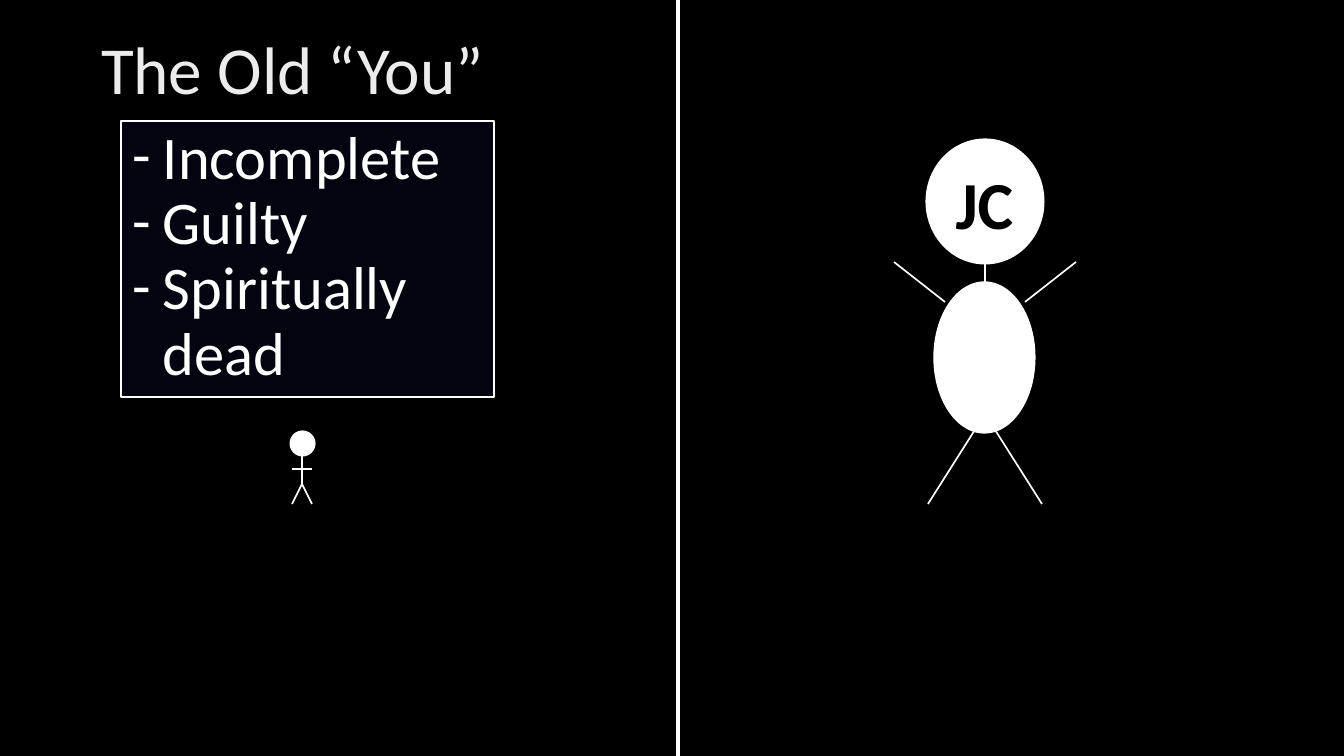
from lxml import etree
from pptx import Presentation
from pptx.dml.color import RGBColor
from pptx.enum.shapes import MSO_CONNECTOR, MSO_SHAPE
from pptx.enum.text import MSO_ANCHOR, PP_ALIGN
from pptx.oxml.ns import qn
from pptx.util import Pt

EMU_PER_PX = 7557
BLACK = RGBColor(0x00, 0x00, 0x00)
WHITE = RGBColor(0xFF, 0xFF, 0xFF)
OFF_WHITE = RGBColor(0xEC, 0xEC, 0xEC)
NAVY = RGBColor(0x04, 0x04, 0x10)
OVAL, RECT = MSO_SHAPE.OVAL, MSO_SHAPE.RECTANGLE
STRAIGHT = MSO_CONNECTOR.STRAIGHT
CENTER, LEFT = PP_ALIGN.CENTER, PP_ALIGN.LEFT
TOP = MSO_ANCHOR.TOP


def px(*values):
    return [v * EMU_PER_PX for v in values]


class SlideBuilder:
    """Draw styled elements on the current slide or group."""

    font = "Calibri"

    def __init__(self, prs):
        self.slide = prs.slides.add_slide(prs.slide_layouts[6])
        self.shapes = self.slide.shapes
        fill = self.slide.background.fill
        fill.solid()
        fill.fore_color.rgb = BLACK

    def start_group(self):
        self.shapes = self.slide.shapes.add_group_shape().shapes

    def end_group(self):
        self.shapes = self.slide.shapes

    def shape(self, kind, box, fill=WHITE, width=0.75):
        sp = self.shapes.add_shape(kind, *px(*box))
        sp.shadow.inherit = False
        sp.fill.solid()
        sp.fill.fore_color.rgb = fill
        sp.line.color.rgb = WHITE
        sp.line.width = Pt(width)
        return sp

    def line(self, ends, width=1):
        cxn = self.shapes.add_connector(STRAIGHT, *px(*ends))
        cxn.line.color.rgb = WHITE
        cxn.line.width = Pt(width)
        etree.SubElement(cxn._element.spPr, qn("a:effectLst"))

    def set_text(self, sp, lines, color, size, bold=False, align=CENTER, bullet=None):
        tf = sp.text_frame
        for name, value in {"word_wrap": True, "vertical_anchor": TOP}.items():
            setattr(tf, name, value)
        style = {"name": self.font, "size": Pt(size), "bold": bold}
        for i, text in enumerate(lines):
            p = tf.paragraphs[0] if i == 0 else tf.add_paragraph()
            p.alignment = align
            r = p.add_run()
            r.text = text
            for name, value in style.items():
                setattr(r.font, name, value)
            r.font.color.rgb = color
            if bullet:
                self.bullet(p, bullet)

    def bullet(self, p, char):
        p.line_spacing = 0.9
        pPr = p._p.get_or_add_pPr()
        indent = 30 * EMU_PER_PX
        pPr.set("marL", str(indent))
        pPr.set("indent", str(-indent))
        etree.SubElement(pPr, qn("a:buFont")).set("typeface", self.font)
        etree.SubElement(pPr, qn("a:buChar")).set("char", char)

    def text(self, box, text, color, size, bold=False):
        self.set_text(self.shapes.add_textbox(*px(*box)), [text], color, size, bold)

    def figure(self, head, cx, neck, hip, foot, stride, arms):
        self.shape(OVAL, head, width=3)
        self.line((cx, neck, cx, hip))
        for side in (1, -1):
            self.line((cx, hip, cx + side * stride, foot))
        for arm in arms:
            self.line(arm)


def main():
    prs = Presentation()
    prs.slide_width, prs.slide_height = px(1344, 756)
    s = SlideBuilder(prs)

    s.text((40, 21, 505, 93), "The Old “You”", OFF_WHITE, 40)

    s.start_group()
    s.figure((292, 433, 21, 21), 302, 454, 484, 504, 10, [(292, 469, 312, 469)])
    s.end_group()

    traits = s.shape(RECT, (121, 121, 373, 276), NAVY)
    s.set_text(traits, ["Incomplete", "Guilty", "Spiritually dead"], WHITE, 36,
               align=LEFT, bullet="-")
    s.line((678, 0, 678, 756), 2)

    s.start_group()
    s.figure((928, 141, 114, 121), 985, 262, 414, 504, 57,
             [(985 + d * 91, 262, 985 + d * 40, 302) for d in (-1, 1)])
    s.shape(OVAL, (934, 282, 101, 151))
    s.text((919, 156, 131, 93), "JC", BLACK, 40, bold=True)
    s.end_group()

    prs.save("out.pptx")


if __name__ == "__main__":
    main()
